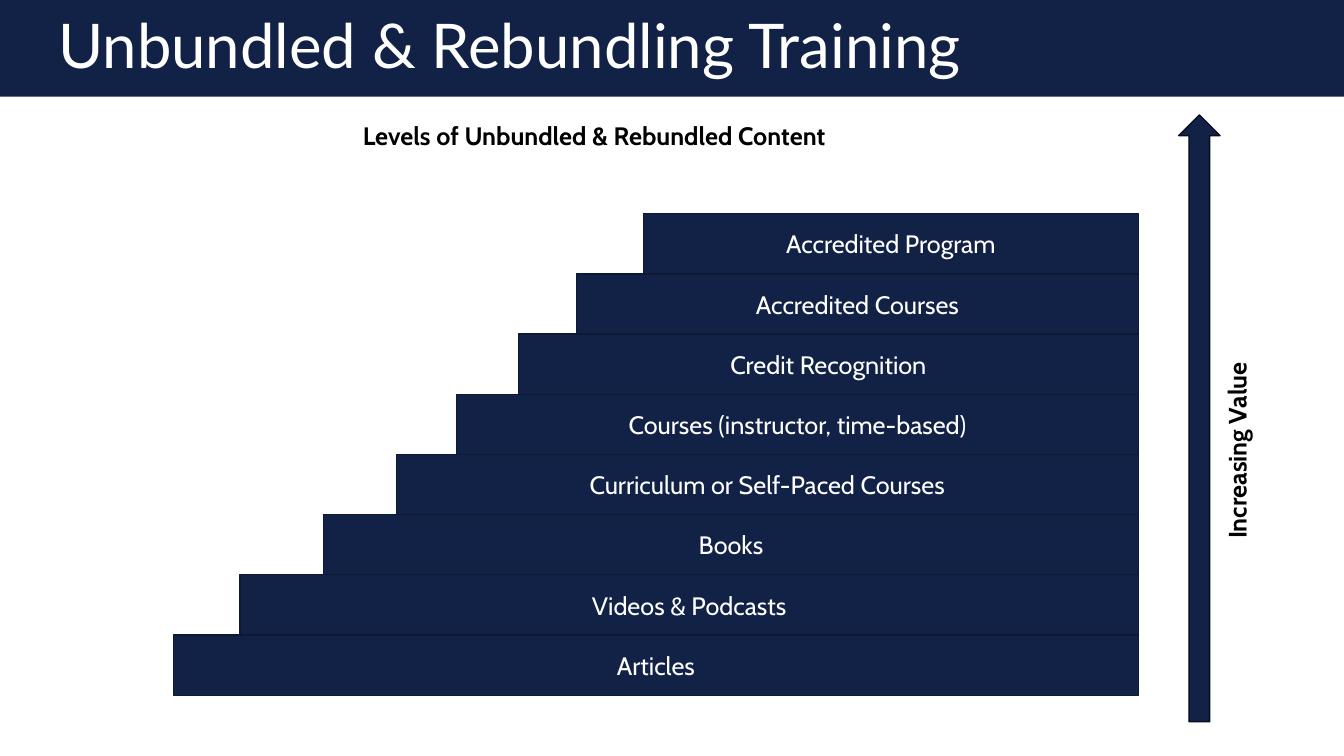
from pptx import Presentation
from pptx.dml.color import RGBColor
from pptx.enum.shapes import MSO_SHAPE
from pptx.enum.text import MSO_ANCHOR, PP_ALIGN
from pptx.util import Inches, Pt

RECT, ARROW = MSO_SHAPE.RECTANGLE, MSO_SHAPE.UP_ARROW
LEFT, CENTER = PP_ALIGN.LEFT, PP_ALIGN.CENTER
TOP, MIDDLE = MSO_ANCHOR.TOP, MSO_ANCHOR.MIDDLE

THEME = {
    "navy": RGBColor.from_string("122146"),
    "edge": RGBColor.from_string("0D1834"),
    "dark": RGBColor.from_string("080E1F"),
    "white": RGBColor.from_string("FFFFFF"),
    "black": RGBColor.from_string("000000"),
    "title": {"name": "Lato", "size": Pt(44)},
    "step": {"name": "Cabin", "size": Pt(18)},
    "label": {"name": "Cabin", "size": Pt(18), "bold": True},
}

WIDE, HIGH = 13.33, 7.5
ROW = 0.08 * HIGH
RIGHT = 11.29
FIRST, LAST = 2.12, 6.3
STEPS = [
    ("Accredited Program", 6.38),
    ("Accredited Courses", 5.72),
    ("Credit Recognition", 5.14),
    ("Courses (instructor, time-based)", 4.53),
    ("Curriculum or Self-Paced Courses", 3.93),
    ("Books", 3.21),
    ("Videos & Podcasts", 2.38),
    ("Articles", 1.72),
]
PITCH = (LAST - FIRST) / (len(STEPS) - 1)

deck = Presentation()
deck.slide_width, deck.slide_height = Inches(WIDE), Inches(HIGH)
slide = deck.slides.add_slide(deck.slide_layouts[6])


def block(kind, box, edge=None):
    """Add a navy shape, outlined only when an edge colour is given."""
    shape = slide.shapes.add_shape(kind, *map(Inches, box))
    shape.shadow.inherit = False
    shape.fill.solid()
    shape.fill.fore_color.rgb = THEME["navy"]
    if edge:
        shape.line.color.rgb = THEME[edge]
        shape.line.width = Pt(1)
    else:
        shape.line.fill.background()
    return shape


def write(shape, text, style, color, align=LEFT, anchor=TOP):
    frame = shape.text_frame
    frame.word_wrap = True
    frame.vertical_anchor = anchor
    line = frame.paragraphs[0]
    line.alignment = align
    run = line.add_run()
    run.text = text
    for key, value in THEME[style].items():
        setattr(run.font, key, value)
    run.font.color.rgb = THEME[color]
    return line


# Title band
block(RECT, (0, 0, WIDE, 0.96))
title = slide.shapes.add_textbox(*map(Inches, (0.48, 0.11, 12.26, 0.74)))
line = write(title, "Unbundled & Rebundling Training", "title", "white", anchor=MIDDLE)
line.line_spacing = 0.9

# Staircase, flush at the right
for row, (text, left) in enumerate(STEPS):
    step = block(RECT, (left, FIRST + row * PITCH, RIGHT - left, ROW), "edge")
    write(step, text, "step", "white", CENTER, MIDDLE)

# Value arrow and labels
block(ARROW, (11.69, 1.14, 0.41, 6.02), "dark")
for text, box, turn in [
    ("Increasing Value", (11.2, 4.18, 2.13, 0.4), 270),
    ("Levels of Unbundled & Rebundled Content", (3.5, 1.14, WIDE / 2, 0.4), 0),
]:
    label = slide.shapes.add_textbox(*map(Inches, box))
    label.rotation = turn
    write(label, text, "label", "black")

deck.save("out.pptx")
